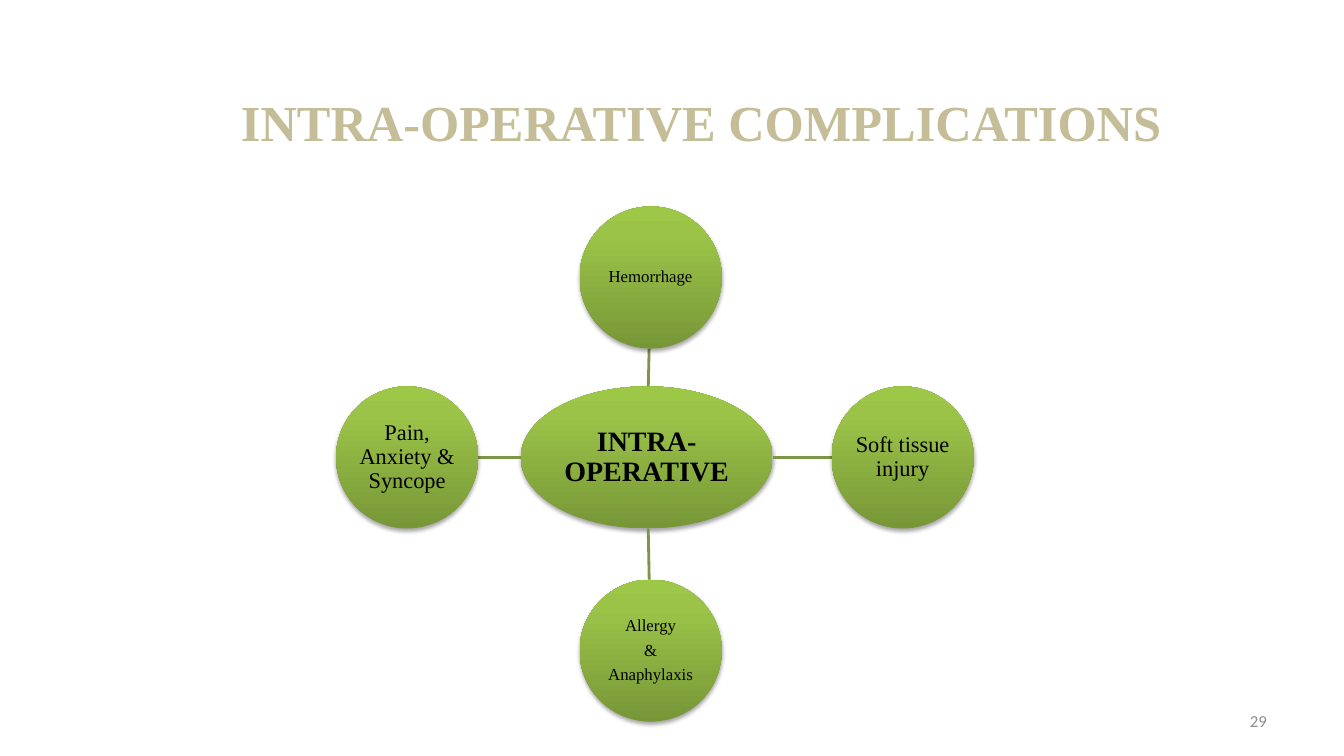
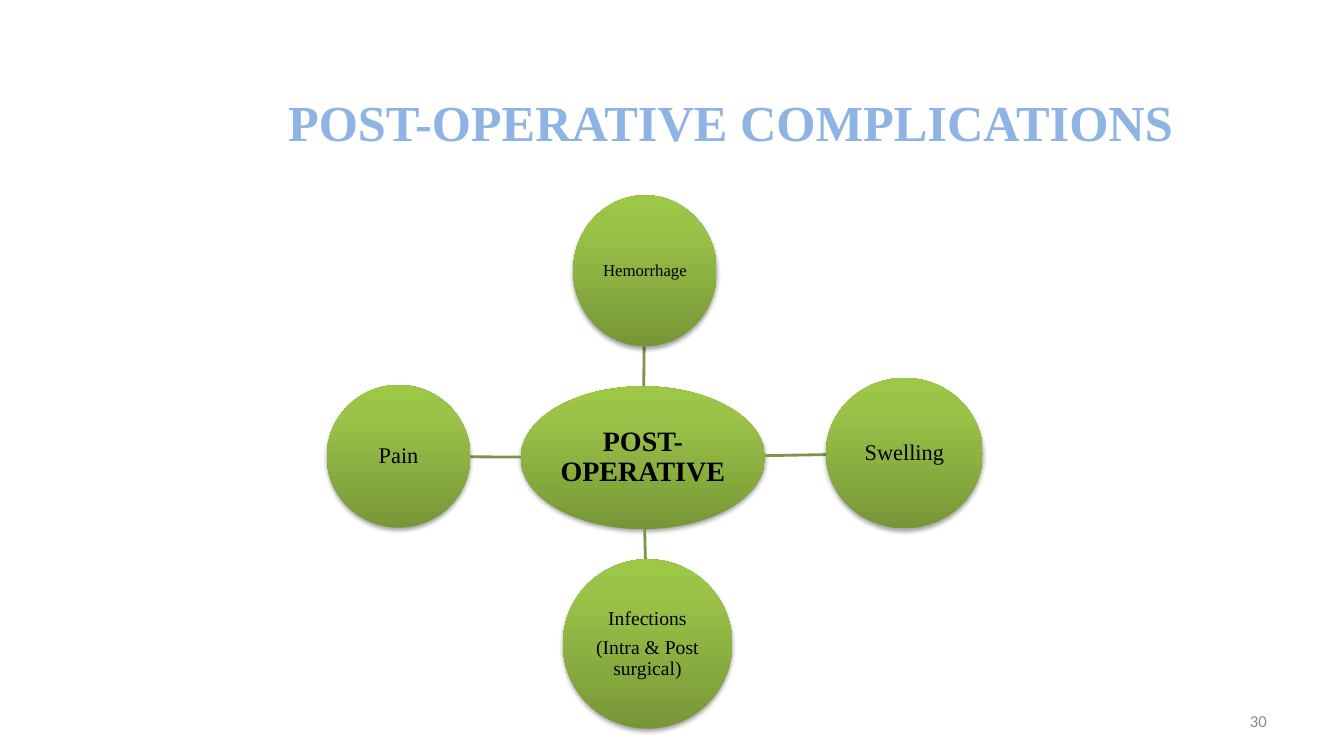
from dataclasses import dataclass
from math import hypot

from lxml import etree
from pptx import Presentation
from pptx.dml.color import RGBColor
from pptx.enum.shapes import MSO_CONNECTOR, MSO_SHAPE
from pptx.enum.text import MSO_ANCHOR, PP_ALIGN
from pptx.oxml.ns import qn
from pptx.slide import Slide
from pptx.util import Pt

ELLIPSE = MSO_SHAPE.OVAL
STRAIGHT = MSO_CONNECTOR.STRAIGHT
MIDDLE = MSO_ANCHOR.MIDDLE
CENTER = PP_ALIGN.CENTER
RIGHT = PP_ALIGN.RIGHT

SERIF = "Times New Roman"
SANS = "Calibri"
BLACK = RGBColor(0x00, 0x00, 0x00)
GREY = RGBColor(0x8C, 0x8C, 0x8C)
TAN = RGBColor(0xC4, 0xBD, 0x97)
SKY = RGBColor(0x8E, 0xB4, 0xE3)
SPOKE_GREEN = RGBColor(0x7C, 0x96, 0x47)
GREEN_STOPS = (
    (0, RGBColor(0x77, 0x97, 0x37)),
    (80, RGBColor(0x9B, 0xC3, 0x48)),
    (100, RGBColor(0x9D, 0xC7, 0x46)),
)

TITLE_TOP, TITLE_HEIGHT = 42, 90
SPACE_AFTER_RATIO = 0.4


@dataclass(frozen=True)
class Bubble:
    text: str
    left: float
    top: float
    width: float
    height: float
    size: float
    bold: bool = False

    @property
    def center(self) -> tuple[float, float]:
        return self.left + self.width / 2, self.top + self.height / 2

    def edge_toward(self, x: float, y: float) -> tuple[float, float]:
        """Return where the line from the centre to (x, y) leaves the ellipse."""
        cx, cy = self.center
        dx, dy = x - cx, y - cy
        scale = 1 / hypot(dx / (self.width / 2), dy / (self.height / 2))
        return cx + dx * scale, cy + dy * scale


@dataclass(frozen=True)
class RadialSlide:
    title: str
    title_color: RGBColor
    title_left: float
    title_width: float
    number: int
    hub: Bubble
    satellites: tuple[Bubble, ...]


SLIDES = (
    RadialSlide(
        "INTRA-OPERATIVE COMPLICATIONS", TAN, 138, 726, 29,
        Bubble("INTRA-OPERATIVE", 372, 276, 180, 101.5, 20, True),
        (
            Bubble("Hemorrhage", 414, 147.5, 101.5, 101.5, 12),
            Bubble("Soft tissue injury", 594, 276, 101.5, 101.5, 16),
            Bubble("Allergy\n&\nAnaphylaxis", 414, 414, 101.5, 101.5, 12),
            Bubble("Pain, Anxiety & Syncope", 240, 276, 101.5, 101.5, 16),
        ),
    ),
    RadialSlide(
        "POST-OPERATIVE COMPLICATIONS", SKY, 144, 756, 30,
        Bubble("POST-OPERATIVE", 372, 276, 174.5, 102, 20, True),
        (
            Bubble("Hemorrhage", 409.5, 139.5, 102.5, 108, 12),
            Bubble("Swelling", 590, 270, 112, 107.5, 16),
            Bubble("Infections\n(Intra & Post surgical)", 402, 399.5, 121, 121, 14),
            Bubble("Pain", 233.5, 275, 102.5, 102, 16),
        ),
    ),
)


def style_text(frame, font_name: str, size: float, color: RGBColor,
               align: PP_ALIGN, bold: bool = False) -> None:
    frame.word_wrap = True
    frame.vertical_anchor = MIDDLE
    for paragraph in frame.paragraphs:
        paragraph.alignment = align
        for run in paragraph.runs:
            run.font.name = font_name
            run.font.size = Pt(size)
            run.font.bold = bold
            run.font.color.rgb = color


def add_color(parent, color: RGBColor):
    return etree.SubElement(parent, qn("a:srgbClr"), val=str(color))


def apply_green_gradient(shape) -> None:
    shape.fill.gradient()
    shape.fill.gradient_angle = 90
    stops = shape.fill._xPr.find(qn("a:gradFill")).find(qn("a:gsLst"))
    for stop in list(stops):
        stops.remove(stop)
    for percent, color in GREEN_STOPS:
        add_color(etree.SubElement(stops, qn("a:gs"), pos=str(percent * 1000)), color)


def apply_soft_shadow(shape) -> None:
    shape.shadow.inherit = False
    effects = shape._element.spPr.find(qn("a:effectLst"))
    shadow = etree.SubElement(
        effects, qn("a:outerShdw"), blurRad=str(Pt(3.1)), dist=str(Pt(1.8)),
        dir="5400000", rotWithShape="0")
    etree.SubElement(add_color(shadow, BLACK), qn("a:alpha"), val="35000")


def add_bubble(slide: Slide, bubble: Bubble) -> None:
    ellipse = slide.shapes.add_shape(
        ELLIPSE, Pt(bubble.left), Pt(bubble.top), Pt(bubble.width), Pt(bubble.height))
    apply_green_gradient(ellipse)
    ellipse.line.fill.background()
    apply_soft_shadow(ellipse)
    frame = ellipse.text_frame
    frame.text = bubble.text
    frame.margin_left = frame.margin_right = Pt(1)
    frame.margin_top = frame.margin_bottom = Pt(1)
    style_text(frame, SERIF, bubble.size, BLACK, CENTER, bubble.bold)
    for paragraph in frame.paragraphs:
        paragraph.line_spacing = 0.9
        paragraph.space_after = Pt(bubble.size * SPACE_AFTER_RATIO)


def add_spoke(slide: Slide, hub: Bubble, satellite: Bubble) -> None:
    ends = hub.edge_toward(*satellite.center) + satellite.edge_toward(*hub.center)
    spoke = slide.shapes.add_connector(STRAIGHT, *(Pt(value) for value in ends))
    spoke.line.color.rgb = SPOKE_GREEN
    spoke.line.width = Pt(2)
    etree.SubElement(spoke._element.spPr, qn("a:effectLst"))


def add_title(slide: Slide, content: RadialSlide) -> None:
    title = slide.shapes.title
    title.left, title.top = Pt(content.title_left), Pt(TITLE_TOP)
    title.width, title.height = Pt(content.title_width), Pt(TITLE_HEIGHT)
    title.text_frame.text = content.title
    style_text(title.text_frame, SERIF, 36, content.title_color, CENTER, True)


def add_page_number(slide: Slide, number: int) -> None:
    page_number = slide.shapes.add_textbox(Pt(688), Pt(500.5), Pt(224), Pt(28.75))
    page_number.text_frame.text = str(number)
    style_text(page_number.text_frame, SANS, 12, GREY, RIGHT)


def build_slide(prs, content: RadialSlide) -> None:
    slide = prs.slides.add_slide(prs.slide_layouts.get_by_name("Title Only"))
    add_title(slide, content)
    add_page_number(slide, content.number)
    add_bubble(slide, content.hub)
    for satellite in content.satellites:
        add_spoke(slide, content.hub, satellite)
        add_bubble(slide, satellite)


def main() -> None:
    prs = Presentation()
    prs.slide_width, prs.slide_height = Pt(960), Pt(540)
    for content in SLIDES:
        build_slide(prs, content)
    prs.save("out.pptx")


if __name__ == "__main__":
    main()
